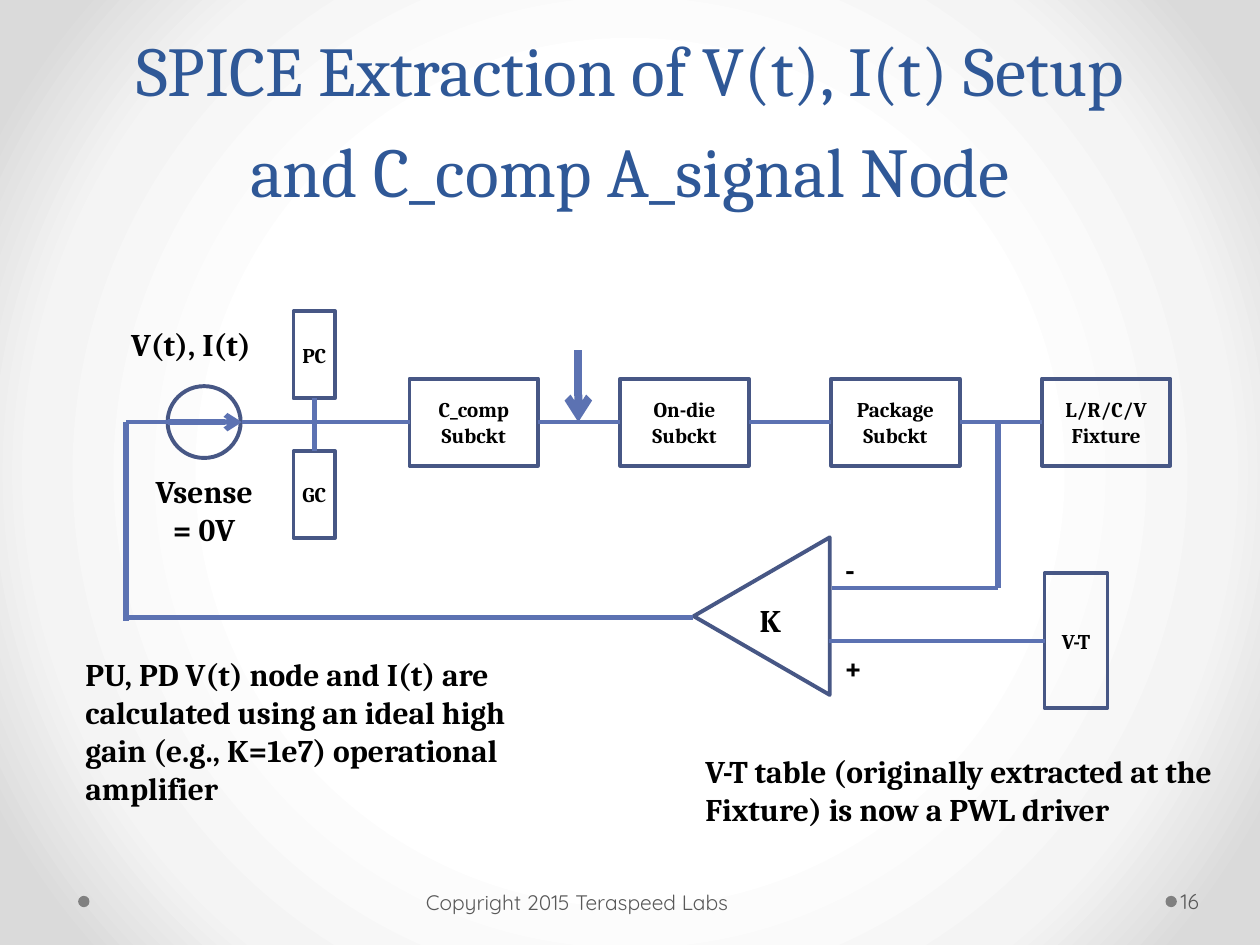
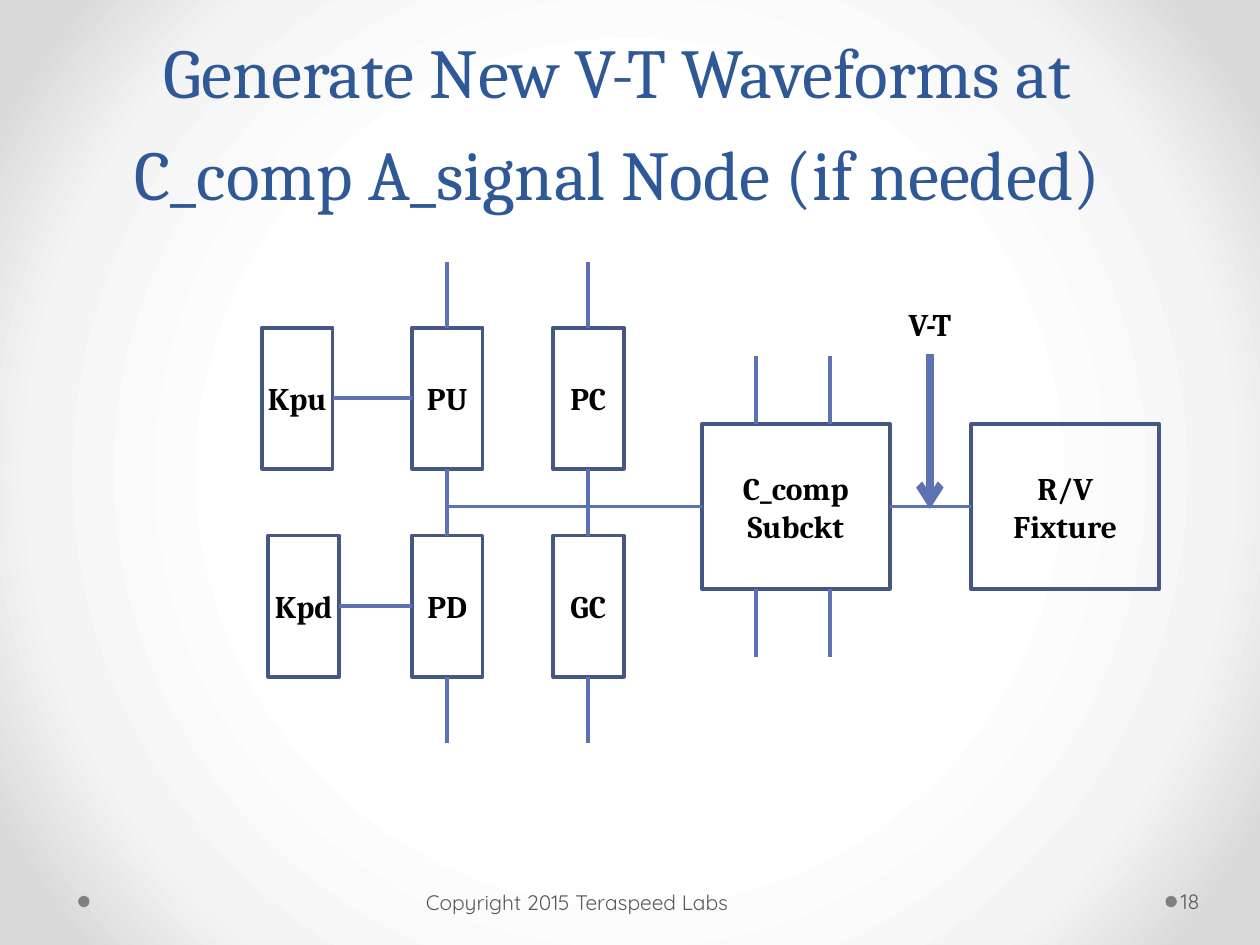
from dataclasses import dataclass

from lxml.etree import SubElement, fromstring
from pptx import Presentation
from pptx.dml.color import RGBColor
from pptx.enum.shapes import MSO_CONNECTOR, MSO_SHAPE
from pptx.enum.text import MSO_ANCHOR, PP_ALIGN
from pptx.oxml.ns import nsdecls, qn
from pptx.slide import Slide
from pptx.util import Inches, Pt

COLOURS = {
    "title": "2F5897",
    "outline": "475785",
    "wire": "5C72B2",
    "label": "000000",
    "footer": "595959",
    "dot": "808080",
}
GLOW = {50: "FFFFFF", 76: "F4F4F4", 92: "DADADA"}
SERIF, SANS = "Cambria", "Quicksand"
SLIDE_WIDTH, SLIDE_HEIGHT = Inches(10), Inches(7.5)
COLUMN, ROW = SLIDE_WIDTH / 100, SLIDE_HEIGHT / 75
TOP, LEFT, BOTTOM, RIGHT = range(4)


def colour(key):
    """Return a palette entry as an RGB colour."""
    return RGBColor.from_string(COLOURS[key])


def write(frame, text, size=18, font=SERIF, ink="label", bold=True,
          align=PP_ALIGN.LEFT, spacing=None):
    """Write text into a frame, one run per line."""
    paragraph = frame.paragraphs[0]
    paragraph.alignment = align
    if spacing:
        paragraph.line_spacing = Pt(spacing)
    for index, line in enumerate(text.split("\n")):
        if index:
            paragraph.add_line_break()
        run = paragraph.add_run()
        run.text = line
        run.font.name, run.font.size, run.font.bold = font, Pt(size), bold
        run.font.color.rgb = colour(ink)


@dataclass
class Region:
    """A box on a slide, measured in grid columns and rows."""

    slide: Slide
    left: float
    top: float
    width: float
    height: float

    def point(self, column, row):
        """Turn a position in the region into slide lengths."""
        return round((self.left + column) * COLUMN), round((self.top + row) * ROW)

    def box(self, column, row, width, height):
        """Turn a box in the region into slide lengths."""
        return *self.point(column, row), round(width * COLUMN), round(height * ROW)

    def text(self, text, column, row, width, height, anchor=MSO_ANCHOR.TOP,
             insets=(1, 0.5, 1, 0.5), **style):
        """Place free text."""
        frame = self.slide.shapes.add_textbox(
            *self.box(column, row, width, height)).text_frame
        frame.word_wrap = True
        frame.vertical_anchor = anchor
        left, top, right, bottom = insets
        frame.margin_left, frame.margin_right = round(left * COLUMN), round(right * COLUMN)
        frame.margin_top, frame.margin_bottom = round(top * ROW), round(bottom * ROW)
        write(frame, text, **style)

    def outline(self, preset, column, row, width, height):
        """Place an unfilled outlined symbol."""
        symbol = self.slide.shapes.add_shape(preset, *self.box(column, row, width, height))
        symbol.shadow.inherit = False
        symbol.fill.background()
        symbol.line.color.rgb = colour("outline")
        symbol.line.width = Pt(2.25)
        return symbol

    def block(self, label, column, row, width, height, size=18):
        """Place a labelled circuit block."""
        block = self.outline(MSO_SHAPE.RECTANGLE, column, row, width, height)
        frame = block.text_frame
        frame.word_wrap = " " in label
        frame.vertical_anchor = MSO_ANCHOR.MIDDLE
        frame.margin_left = frame.margin_right = round(0.15 * width * COLUMN)
        write(frame, label, size, align=PP_ALIGN.CENTER)
        return block

    def wire(self, start, end, weight=2.25, arrow=False):
        """Draw a wire between two ends, each a (column, row) or a (block, side)."""
        joined = [not isinstance(place[0], (int, float)) for place in (start, end)]
        ends = [(0, 0) if joint else self.point(*place)
                for place, joint in zip((start, end), joined)]
        wire = self.slide.shapes.add_connector(MSO_CONNECTOR.STRAIGHT, *ends[0], *ends[1])
        if joined[0]:
            wire.begin_connect(*start)
        if joined[1]:
            wire.end_connect(*end)
        wire.line.color.rgb = colour("wire")
        wire.line.width = Pt(weight)
        properties = wire.element.spPr
        if arrow:
            SubElement(properties.find(qn("a:ln")), qn("a:tailEnd"), type="arrow")
        SubElement(properties, qn("a:effectLst"))


def paint_background(master):
    """Give every slide the round grey glow."""
    master.background.fill.gradient()
    gradient = master.element.find(".//" + qn("a:gradFill"))
    stops = "".join(f'<a:gs pos="{share * 1000}"><a:srgbClr val="{shade}"/></a:gs>'
                    for share, shade in GLOW.items())
    glow = fromstring(
        f'<a:gradFill {nsdecls("a")} rotWithShape="1"><a:gsLst>{stops}</a:gsLst>'
        '<a:path path="circle"><a:fillToRect l="50000" t="50000" r="50000" b="50000"/>'
        "</a:path></a:gradFill>")
    gradient.getparent().replace(gradient, glow)


def header(region, title):
    """Fill the region with the slide title."""
    region.text(title, 0, 0, region.width, region.height, MSO_ANCHOR.MIDDLE, size=40,
                ink="title", bold=False, align=PP_ALIGN.CENTER, spacing=58)


def footer(region, page):
    """Place the two dots, the copyright line and the page number."""
    for column in (6.2, 92.5):
        dot = region.slide.shapes.add_shape(
            MSO_SHAPE.OVAL, *region.box(column, 1.6, 0.9, 0.9))
        dot.shadow.inherit = False
        dot.fill.solid()
        dot.fill.fore_color.rgb = colour("dot")
        dot.line.fill.background()
    style = dict(size=12, font=SANS, ink="footer", bold=False)
    region.text(str(page), 93.4, 0, 6.1, 4, MSO_ANCHOR.MIDDLE, (0.3, 0.5, 0.5, 0.5), **style)
    region.text("Copyright 2015 Teraspeed Labs", 33.3, 0.1, 31.1, 4, MSO_ANCHOR.MIDDLE,
                (0.5, 0.5, 1, 0.5), **style)


def signal_path(region):
    """Draw the sense source, the clamps and the chain of subcircuits."""
    axis, block_height = 8.5, 6.9
    chain = [region.block(label, 22.5 + 16.73 * index, axis - block_height / 2,
                          10.2, block_height, 12)
             for index, label in enumerate(("C_comp Subckt", "On-die Subckt",
                                            "Package Subckt", "L/R/C/V Fixture"))]
    power_clamp, ground_clamp = (region.block(label, 13.3, row, 3.3, block_height, 12)
                                 for label, row in (("PC", -0.3), ("GC", 10.8)))
    region.wire((power_clamp, BOTTOM), (ground_clamp, TOP), 3)
    region.outline(MSO_SHAPE.OVAL, 3.3, axis - 2.85, 5.8, 5.7)
    region.wire((0, axis), (3.4, axis))
    region.wire((3.3, axis), (9.2, axis), 3, arrow=True)
    region.wire((9.2, axis), (chain[0], LEFT))
    for before, after in zip(chain, chain[1:]):
        region.wire((before, RIGHT), (after, LEFT))
    region.wire((35.9, 2.8), (35.9, axis), 4.5, arrow=True)
    region.text("V(t), I(t)", -1.1, 0.3, 12.5, 4, align=PP_ALIGN.CENTER)
    region.text("Vsense = 0V", 1.1, 12, 10.2, 7.1, align=PP_ALIGN.CENTER)


def feedback_loop(region):
    """Draw the amplifier that returns the fixture voltage to the source."""
    output, minus, plus, tap = 15.5, 13.2, 17.35, 69.2
    amplifier = region.outline(MSO_SHAPE.ISOSCELES_TRIANGLE, 44.2, 10, 12.5, 10.8)
    amplifier.rotation = 270
    driver = region.block("V-T", 72.9, 12, 5, 10.7, 12)
    region.wire((0, 0), (0, output + 0.3), 3)
    region.wire((45, output), (0, output), 3)
    region.wire((tap, 0), (tap, minus), 3)
    region.wire((56, minus), (tap, minus))
    region.wire((55.8, plus), (driver, LEFT))
    region.text("K", 49.3, 13.7, 5.7, 4)
    region.text("-", 56.1, 9.7, 4, 4)
    region.text("+", 56, 17.4, 4, 4)


def captions(region):
    """Explain the amplifier and the driver below the circuit."""
    region.text("PU, PD V(t) node and I(t) are calculated using an ideal high gain "
                "(e.g., K=1e7) operational amplifier", 0, 0, 37.5, 13.5)
    region.text("V-T table (originally extracted at the Fixture) is now a PWL driver",
                49.2, 7.7, 42.4, 7.1)


def buffer_stage(region):
    """Draw the upper and lower rows of buffer blocks with their supplies."""
    upper, lower = ([region.block(label, column, row, 5.6, 11.2)
                     for label, column in zip(labels, (first, 11.9, 23.1))]
                    for labels, first, row in ((("Kpu", "PU", "PC"), 0, 5.2),
                                               (("Kpd", "PD", "GC"), 0.5, 21.7)))
    for control, stage, _ in (upper, lower):
        region.wire((control, RIGHT), (stage, LEFT))
    for high, low, column in zip(upper[1:], lower[1:], (14.7, 25.9)):
        region.wire((column, 0), (high, TOP))
        region.wire((high, BOTTOM), (low, TOP))
        region.wire((low, BOTTOM), (column, region.height))


def output_stage(region):
    """Draw the bus, the compensation subcircuit and the fixture."""
    axis, block_height = 17.2, 13.1
    top = axis - block_height / 2
    compensation, fixture = (region.block(label, column, top, 14.9, block_height)
                             for label, column in (("C_comp Subckt", 20.2),
                                                   ("R/V Fixture", 41.6)))
    region.wire((0, axis), (compensation, LEFT))
    region.wire((compensation, RIGHT), (fixture, LEFT))
    for column in (24.5, 30.4):
        for row in (top - 5.4, top + block_height):
            region.wire((column, row), (column, row + 5.4))
    region.wire((38.3, 5.1), (38.3, axis + 0.2), 4.5, arrow=True)
    region.text("V-T", 34.2, 0.7, 8.2, 4, align=PP_ALIGN.CENTER)


def add_slide(deck, title, title_corner, page):
    """Add a blank slide with the shared title and footer."""
    slide = deck.slides.add_slide(deck.slide_layouts[6])
    header(Region(slide, *title_corner, 90, 17.5), title)
    footer(Region(slide, 0, 69.5, 100, 4.1), page)
    return slide


def main():
    """Build the two circuit slides."""
    deck = Presentation()
    deck.slide_width, deck.slide_height = SLIDE_WIDTH, SLIDE_HEIGHT
    paint_background(deck.slide_master)

    extraction = add_slide(
        deck, "SPICE Extraction of V(t), I(t) Setup and C_comp A_signal Node", (5, 0), 16)
    signal_path(Region(extraction, 10, 25, 83, 19))
    feedback_loop(Region(extraction, 10, 33.5, 78, 23))
    captions(Region(extraction, 5.8, 51.5, 92, 15))

    waveforms = add_slide(
        deck, "Generate New V-T Waveforms at\nC_comp A_signal Node (if needed)", (4, 0.2), 18)
    buffer_stage(Region(waveforms, 20.8, 20.8, 28.7, 38.2))
    output_stage(Region(waveforms, 35.5, 23, 56.5, 29.2))

    deck.save("out.pptx")


if __name__ == "__main__":
    main()
